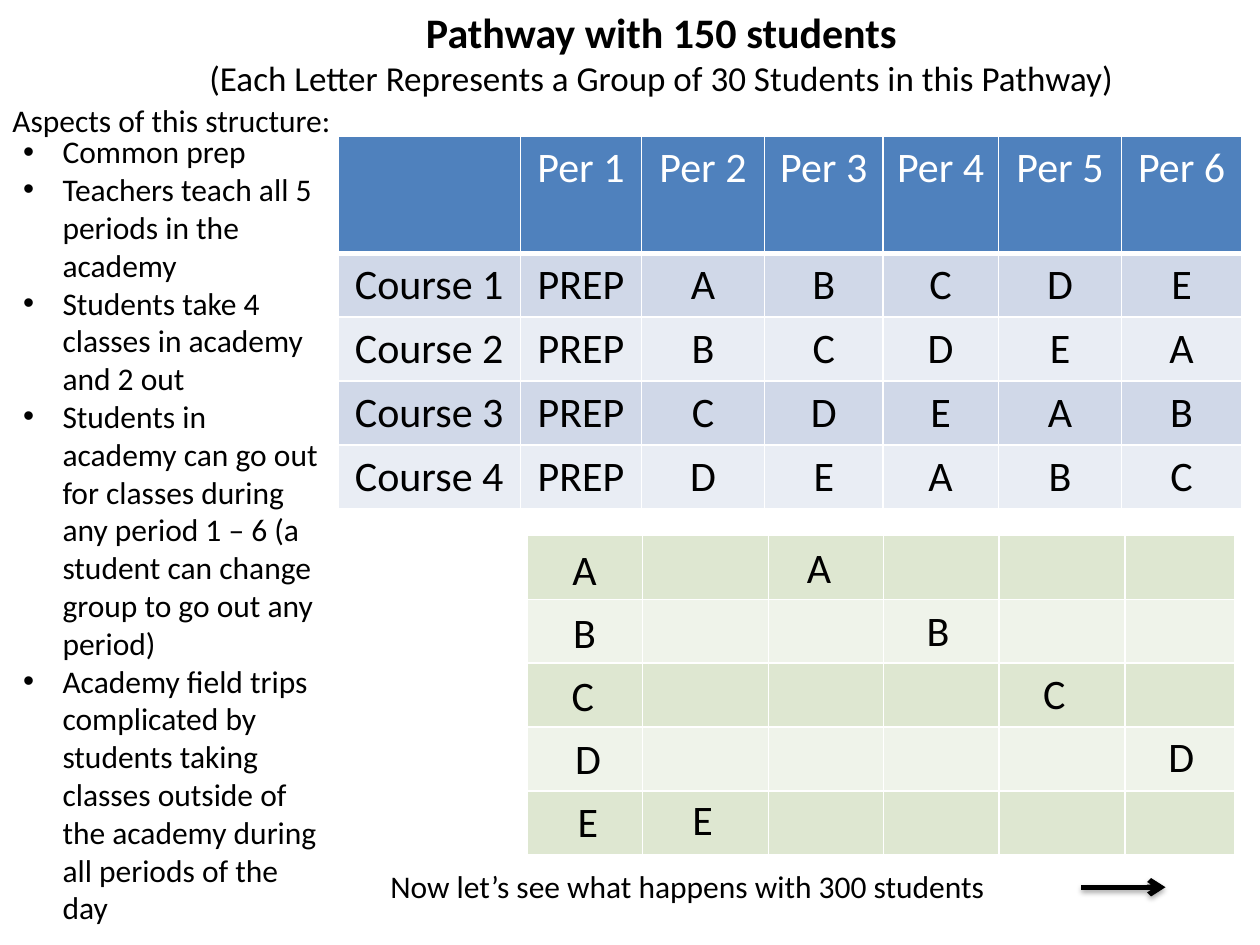
from dataclasses import dataclass
from typing import Optional

from lxml.etree import SubElement
from pptx import Presentation
from pptx.dml.color import RGBColor
from pptx.enum.shapes import MSO_CONNECTOR
from pptx.enum.text import MSO_ANCHOR, MSO_AUTO_SIZE, PP_ALIGN
from pptx.oxml.ns import qn
from pptx.util import Pt

BLACK = RGBColor(0x00, 0x00, 0x00)
WHITE = RGBColor(0xFF, 0xFF, 0xFF)
HEADER_BLUE = RGBColor(0x4F, 0x81, 0xBD)
BLUE_BANDS = (RGBColor(0xD0, 0xD8, 0xE8), RGBColor(0xE9, 0xED, 0xF4))
GREEN_BANDS = (RGBColor(0xDE, 0xE7, 0xD1), RGBColor(0xEF, 0xF3, 0xEA))

GROUPS = "ABCDE"
PERIODS = 6
ROW_HEIGHT = 36.5
HEADER_HEIGHT = 67
LETTER_STEP = 36


@dataclass(frozen=True)
class Grid:
    left: float
    top: float
    columns: tuple[float, ...]
    rows: list[list[str]]
    bands: tuple[RGBColor, RGBColor]
    header: Optional[RGBColor] = None


@dataclass(frozen=True)
class Label:
    text: str
    left: float
    top: float
    width: float
    height: float = 29
    size: float = 18
    align: PP_ALIGN = PP_ALIGN.LEFT


def write(paragraph, text: str, size: float, color=BLACK, bold=False) -> None:
    run = paragraph.add_run()
    run.text = text
    run.font.color.rgb = color
    for attribute, value in {"name": "Calibri", "size": Pt(size), "bold": bold}.items():
        setattr(run.font, attribute, value)


def place(shape, left: float, top: float, width: float, height: float) -> None:
    bounds = {"left": left, "top": top, "width": width, "height": height}
    for attribute, value in bounds.items():
        setattr(shape, attribute, Pt(value))


def set_frame(frame) -> None:
    frame_format = {
        "word_wrap": True,
        "auto_size": MSO_AUTO_SIZE.NONE,
        "vertical_anchor": MSO_ANCHOR.TOP,
    }
    for attribute, value in frame_format.items():
        setattr(frame, attribute, value)


def add_paragraphs(frame, count: int):
    return [frame.paragraphs[0]] + [frame.add_paragraph() for _ in range(count - 1)]


def border_cell(cell, bottom_width: float) -> None:
    properties = cell._tc.get_or_add_tcPr()
    for side, width in {"lnL": 1, "lnR": 1, "lnT": 1, "lnB": bottom_width}.items():
        edge = SubElement(properties, qn(f"a:{side}"), w=str(Pt(width)))
        fill = SubElement(edge, qn("a:solidFill"))
        SubElement(fill, qn("a:srgbClr"), val=str(WHITE))


def draw_grid(slide, grid: Grid) -> None:
    heights = [ROW_HEIGHT] * len(grid.rows)
    if grid.header:
        heights[0] = HEADER_HEIGHT
    table = slide.shapes.add_table(
        len(heights), len(grid.columns), Pt(grid.left), Pt(grid.top),
        Pt(sum(grid.columns)), Pt(sum(heights))).table
    table.first_row = grid.header is not None
    for column, width in zip(table.columns, grid.columns):
        column.width = Pt(width)
    for r, texts in enumerate(grid.rows):
        table.rows[r].height = Pt(heights[r])
        is_header = table.first_row and r == 0
        band = grid.bands[(r - table.first_row) % 2]
        for c, text in enumerate(texts):
            cell = table.cell(r, c)
            border_cell(cell, 3 if is_header else 1)
            cell.fill.solid()
            cell.fill.fore_color.rgb = grid.header if is_header else band
            if text:
                paragraph = cell.text_frame.paragraphs[0]
                paragraph.alignment = PP_ALIGN.CENTER
                write(paragraph, text, 24, WHITE if is_header else BLACK)


def draw_label(slide, label: Label) -> None:
    box = slide.shapes.add_textbox(
        Pt(label.left), Pt(label.top), Pt(label.width), Pt(label.height))
    set_frame(box.text_frame)
    paragraph = box.text_frame.paragraphs[0]
    paragraph.alignment = label.align
    write(paragraph, label.text, label.size)


def group_letter(group: str, left: float, first_top: float) -> Label:
    top = first_top + GROUPS.index(group) * LETTER_STEP
    return Label(group, left, top, 66, 36, 24, PP_ALIGN.CENTER)


def fill_title(title) -> None:
    place(title, 84, 0, 588, 90)
    set_frame(title.text_frame)
    heading, subtitle = add_paragraphs(title.text_frame, 2)
    write(heading, "Pathway with 150 students", 24, bold=True)
    write(subtitle, "(Each Letter Represents a Group of 30 Students in this Pathway)", 20)
    for paragraph in (heading, subtitle):
        paragraph.alignment = PP_ALIGN.CENTER


def fill_aspects(body, aspects: list[str]) -> None:
    place(body, 6, 72, 186, 465)
    set_frame(body.text_frame)
    for paragraph, aspect in zip(add_paragraphs(body.text_frame, len(aspects)), aspects):
        properties = paragraph._p.get_or_add_pPr()
        properties.set("marL", str(Pt(22.5)))
        properties.set("indent", str(Pt(-22.5)))
        SubElement(properties, qn("a:buFont"), typeface="Arial")
        SubElement(properties, qn("a:buChar"), char="•")
        paragraph.space_before = Pt(0)
        write(paragraph, aspect, 18)


def draw_next_arrow(slide) -> None:
    arrow = slide.shapes.add_connector(
        MSO_CONNECTOR.STRAIGHT, Pt(618), Pt(507), Pt(666), Pt(507))
    arrow.line.color.rgb = BLACK
    arrow.line.width = Pt(3)
    SubElement(arrow.line._get_or_add_ln(), qn("a:tailEnd"), type="arrow")
    effects = SubElement(arrow._element.spPr, qn("a:effectLst"))
    shadow = SubElement(effects, qn("a:outerShdw"), blurRad=str(Pt(3.1)),
                        dist=str(Pt(1.8)), dir="5400000", rotWithShape="0")
    tint = SubElement(shadow, qn("a:srgbClr"), val=str(BLACK))
    SubElement(tint, qn("a:alpha"), val="35000")


def main() -> None:
    presentation = Presentation()
    presentation.slide_width, presentation.slide_height = Pt(720), Pt(540)
    slide = presentation.slides.add_slide(presentation.slide_layouts[1])

    fill_title(slide.shapes.title)
    fill_aspects(slide.placeholders[1], [
        "Common prep",
        "Teachers teach all 5 periods in the academy",
        "Students take 4 classes in academy and 2 out",
        "Students in academy can go out for classes during any period 1 – 6 "
        "(a student can change group to go out any period)",
        "Academy field trips complicated by students taking classes outside of "
        "the academy during all periods of the day",
    ])

    schedule = [["", *(f"Per {period + 1}" for period in range(PERIODS))]]
    for course in range(4):
        rotation = GROUPS[course:] + GROUPS[:course]
        schedule.append([f"Course {course + 1}", "PREP", *rotation])
    draw_grid(slide, Grid(193, 77.75, (104.5, 69, 70.5, 67.5, 66, 70.5, 68.5),
                          schedule, BLUE_BANDS, HEADER_BLUE))
    draw_grid(slide, Grid(301, 306, (66, 72, 66, 66, 72, 62.5),
                          [[""] * PERIODS for _ in GROUPS], GREEN_BANDS))

    first_period_lefts = {"A": 301, "B": 301, "C": 300, "D": 303, "E": 303}
    free_period_lefts = {"A": 435, "B": 503, "C": 569.5, "D": 642, "E": 368.5}
    for lefts, first_top in ((first_period_lefts, 307), (free_period_lefts, 306)):
        for group, left in lefts.items():
            draw_label(slide, group_letter(group, left, first_top))

    draw_label(slide, Label("Aspects of this structure:", 0, 54, 234))
    draw_label(slide, Label("Now let’s see what happens with 300 students", 216, 492, 390))
    draw_next_arrow(slide)
    presentation.save("out.pptx")


if __name__ == "__main__":
    main()
